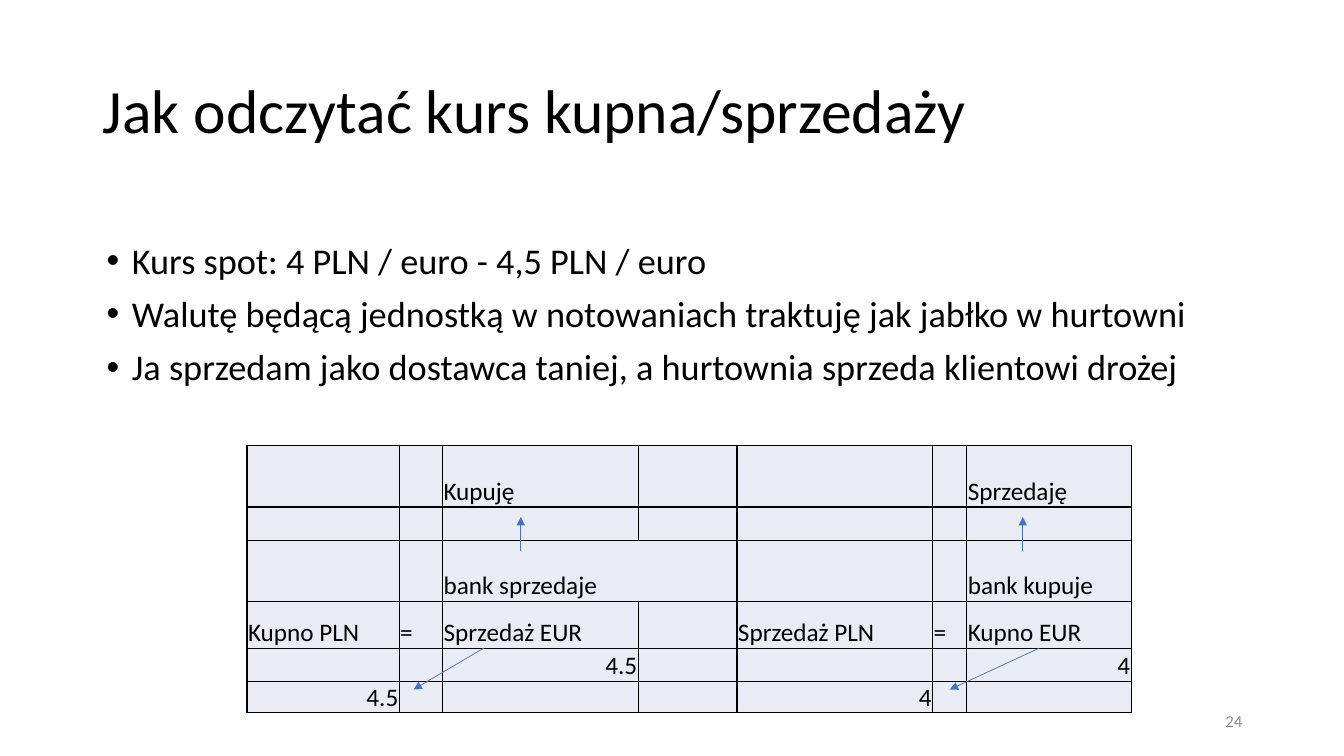
"""Builds the slide on reading a bid/ask exchange rate."""
from lxml.etree import SubElement
from pptx import Presentation
from pptx.dml.color import RGBColor
from pptx.enum.shapes import MSO_CONNECTOR
from pptx.enum.text import MSO_ANCHOR as Anchor, PP_ALIGN as Align
from pptx.oxml.ns import qn
from pptx.util import Inches, Pt

TITLE = "Jak odczytać kurs kupna/sprzedaży"
POINTS = [
    "Kurs spot: 4 PLN / euro - 4,5 PLN / euro",
    "Walutę będącą jednostką w notowaniach traktuję jak jabłko w hurtowni",
    "Ja sprzedam jako dostawca taniej, a hurtownia sprzeda klientowi drożej",
]
PAGE = "24"
RATES = [
    ["", "", "Kupuję", "", "", "", "Sprzedaję"],
    [""] * 7,
    ["", "", "bank sprzedaje", "", "", "", "bank kupuje"],
    ["Kupno PLN", "=", "Sprzedaż EUR", "", "Sprzedaż PLN", "=", "Kupno EUR"],
    ["", "", "4.5", "", "", "", "4"],
    ["4.5", "", "", "", "4", "", ""],
]
NUMERIC_ROWS = (4, 5)
MERGED = ((2, 2), (2, 3))
COLORS = {"text": "000000", "page": "8C8C8C", "cell": "E9EBF5",
          "border": "000000", "arrow": "4472C4"}
FONT = "Calibri"

WIDTH, HEIGHT = 13.33, 7.5
TITLE_BOX = (0.92, 0.4, 11.5, 1.45)
POINTS_BOX = (0.96, 2.36, 11.42, 1.67)
PAGE_BOX = (9.42, 6.95, 3, 0.4)
TABLE_LEFT, TABLE_TOP = 2.45, 4.42
COLUMNS = [1.51, 0.43, 1.94, 0.98, 1.94, 0.34, 1.63]
ROWS = [0.61, 0.33, 0.61, 0.46, 0.33, 0.31]
# Each end is (column + share of it, row + share of it).
ARROWS = [
    ((2.4, 2.18), (2.4, 1.3)),
    ((6.34, 2.18), (6.34, 1.3)),
    ((2.21, 4), (1.33, 5.26)),
    ((6.44, 4), (5.5, 5.26)),
]


def color(name):
    return RGBColor.from_string(COLORS[name])


def style(paragraph, size, tint="text"):
    paragraph.font.name = FONT
    paragraph.font.size = Pt(size)
    paragraph.font.color.rgb = color(tint)


def add_text(slide, box, lines):
    frame = slide.shapes.add_textbox(*map(Inches, box)).text_frame
    frame.word_wrap = True
    frame.text = "\n".join(lines)
    return frame


def add_bullet(paragraph):
    properties = paragraph._p.get_or_add_pPr()
    properties.set("marL", str(Inches(0.25)))
    properties.set("indent", str(-Inches(0.25)))
    SubElement(properties, qn("a:buFont"), typeface="Arial")
    SubElement(properties, qn("a:buChar"), char="•")


def add_borders(cell):
    properties = cell._tc.get_or_add_tcPr()
    for place, side in enumerate(("lnL", "lnR", "lnT", "lnB")):
        line = SubElement(properties, qn(f"a:{side}"), w=str(Pt(1)))
        fill = SubElement(line, qn("a:solidFill"))
        SubElement(fill, qn("a:srgbClr"), val=COLORS["border"])
        properties.insert(place, line)


def fill_cell(cell, text, numeric):
    cell.fill.solid()
    cell.fill.fore_color.rgb = color("cell")
    cell.margin_left = cell.margin_right = cell.margin_top = Inches(0.01)
    cell.margin_bottom = 0
    cell.vertical_anchor = Anchor.BOTTOM
    cell.text = text
    paragraph = cell.text_frame.paragraphs[0]
    paragraph.alignment = Align.RIGHT if numeric else Align.LEFT
    style(paragraph, 18)
    add_borders(cell)


def add_rates(slide):
    box = (TABLE_LEFT, TABLE_TOP, sum(COLUMNS), sum(ROWS))
    rates = slide.shapes.add_table(len(ROWS), len(COLUMNS), *map(Inches, box)).table
    rates.first_row = rates.horz_banding = False
    for column, width in zip(rates.columns, COLUMNS):
        column.width = Inches(width)
    for r, (height, texts) in enumerate(zip(ROWS, RATES)):
        rates.rows[r].height = Inches(height)
        for c, text in enumerate(texts):
            fill_cell(rates.cell(r, c), text, r in NUMERIC_ROWS)
    first, last = MERGED
    rates.cell(*first).merge(rates.cell(*last))


def along(start, tracks, position):
    index = int(position)
    return Inches(start + sum(tracks[:index]) + (position - index) * tracks[index])


def add_arrow(slide, *ends):
    points = [along(*axis) for column, row in ends
              for axis in ((TABLE_LEFT, COLUMNS, column), (TABLE_TOP, ROWS, row))]
    arrow = slide.shapes.add_connector(MSO_CONNECTOR.STRAIGHT, *points)
    arrow.line.color.rgb = color("arrow")
    arrow.line.width = Pt(0.5)
    SubElement(arrow.line._get_or_add_ln(), qn("a:tailEnd"), type="triangle")
    SubElement(arrow._element.spPr, qn("a:effectLst"))


def main():
    deck = Presentation()
    deck.slide_width, deck.slide_height = Inches(WIDTH), Inches(HEIGHT)
    slide = deck.slides.add_slide(deck.slide_layouts[5])

    title = slide.shapes.title
    title.left, title.top, title.width, title.height = map(Inches, TITLE_BOX)
    title.text_frame.text = TITLE
    title.text_frame.vertical_anchor = Anchor.MIDDLE
    heading = title.text_frame.paragraphs[0]
    heading.alignment = Align.LEFT
    heading.line_spacing = 0.9
    style(heading, 44)

    points = add_text(slide, POINTS_BOX, POINTS)
    for i, point in enumerate(points.paragraphs):
        point.line_spacing = 0.9
        point.space_before = Pt(10 if i else 0)
        add_bullet(point)
        style(point, 25.9)

    page = add_text(slide, PAGE_BOX, [PAGE])
    page.vertical_anchor = Anchor.MIDDLE
    page.paragraphs[0].alignment = Align.RIGHT
    style(page.paragraphs[0], 12, "page")

    add_rates(slide)
    for ends in ARROWS:
        add_arrow(slide, *ends)
    deck.save("out.pptx")


if __name__ == "__main__":
    main()
